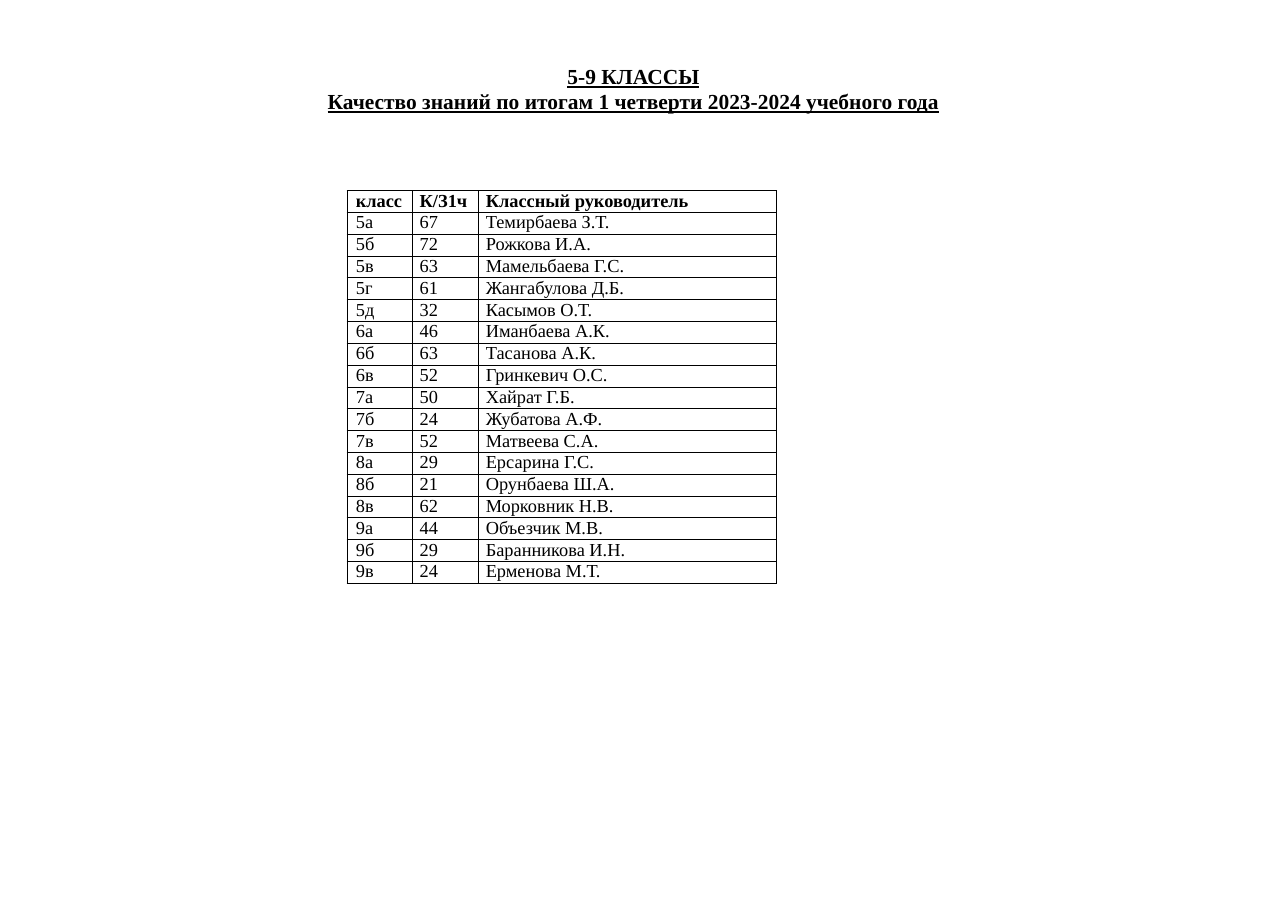
"""Build the slide on first-quarter knowledge quality in grades 5-9."""
from lxml.etree import SubElement
from pptx import Presentation
from pptx.dml.color import RGBColor
from pptx.enum.text import MSO_ANCHOR as Anchor, MSO_AUTO_SIZE as AutoSize, PP_ALIGN as Align
from pptx.oxml.ns import qn
from pptx.util import Inches, Pt

BLACK = RGBColor(0x00, 0x00, 0x00)
WHITE = RGBColor(0xFF, 0xFF, 0xFF)
FONT = "Times New Roman"
COLUMN_WIDTHS = [0.59, 0.6, 2.71]
COLUMN_INDENTS = [0.08, 0.07, 0.07]
TABLE_HEIGHT = 3.57
CLASSES = [
    ("класс", "К/З1ч", "Классный руководитель"),
    ("5а", "67", "Темирбаева З.Т."),
    ("5б", "72", "Рожкова И.А."),
    ("5в", "63", "Мамельбаева Г.С."),
    ("5г", "61", "Жангабулова Д.Б."),
    ("5д", "32", "Касымов О.Т."),
    ("6а", "46", "Иманбаева А.К."),
    ("6б", "63", "Тасанова А.К."),
    ("6в", "52", "Гринкевич О.С."),
    ("7а", "50", "Хайрат Г.Б."),
    ("7б", "24", "Жубатова А.Ф."),
    ("7в", "52", "Матвеева С.А."),
    ("8а", "29", "Ерсарина Г.С."),
    ("8б", "21", "Орунбаева Ш.А."),
    ("8в", "62", "Морковник Н.В."),
    ("9а", "44", "Объезчик М.В."),
    ("9б", "29", "Баранникова И.Н."),
    ("9в", "24", "Ерменова М.Т."),
]


def style_text(paragraph, size, bold, underline=False):
    for run in paragraph.runs:
        run.font.name = FONT
        run.font.size = Pt(size)
        run.font.bold = bold
        run.font.underline = underline
        run.font.color.rgb = BLACK


def add_borders(cell):
    properties = cell._tc.get_or_add_tcPr()
    for position, side in enumerate(("lnL", "lnR", "lnT", "lnB")):
        border = SubElement(properties, qn(f"a:{side}"), w=str(Pt(0.5)))
        properties.insert(position, border)
        fill = SubElement(border, qn("a:solidFill"))
        SubElement(fill, qn("a:srgbClr"), val=str(BLACK))


prs = Presentation()
prs.slide_width, prs.slide_height = Inches(11.69), Inches(8.27)
slide = prs.slides.add_slide(prs.slide_layouts[5])

heading = slide.shapes.title
heading.left, heading.top = Inches(0.28), Inches(0.56)
heading.width, heading.height = Inches(10.84), Inches(0.48)
heading_frame = heading.text_frame
heading_frame.text = "5-9 КЛАССЫ\nКачество знаний по итогам 1 четверти 2023-2024 учебного года"
heading_frame.word_wrap = True
heading_frame.auto_size = AutoSize.NONE
heading_frame.vertical_anchor = Anchor.TOP
heading_frame.margin_left, heading_frame.margin_top = Inches(0.1), Inches(0.03)
heading_frame.margin_right = heading_frame.margin_bottom = 0
for line, spacing in zip(heading_frame.paragraphs, (15.6, 16.4)):
    line.alignment = Align.CENTER
    line.line_spacing = Pt(spacing)
    style_text(line, 14, bold=True, underline=True)

results = slide.shapes.add_table(
    len(CLASSES), len(COLUMN_WIDTHS), Inches(3.15), Inches(1.73),
    Inches(sum(COLUMN_WIDTHS)), Inches(TABLE_HEIGHT)).table
results.horz_banding = False
for column, width in zip(results.columns, COLUMN_WIDTHS):
    column.width = Inches(width)
for row_index, (row, values) in enumerate(zip(results.rows, CLASSES)):
    row.height = Inches(TABLE_HEIGHT / len(CLASSES))
    for cell, value, indent in zip(row.cells, values, COLUMN_INDENTS):
        cell.text = value
        cell.margin_left = Inches(indent)
        cell.margin_top = cell.margin_right = cell.margin_bottom = 0
        cell.fill.solid()
        cell.fill.fore_color.rgb = WHITE
        add_borders(cell)
        entry = cell.text_frame.paragraphs[0]
        entry.line_spacing = Pt(13.4)
        style_text(entry, 12, bold=row_index == 0)

prs.save("out.pptx")
